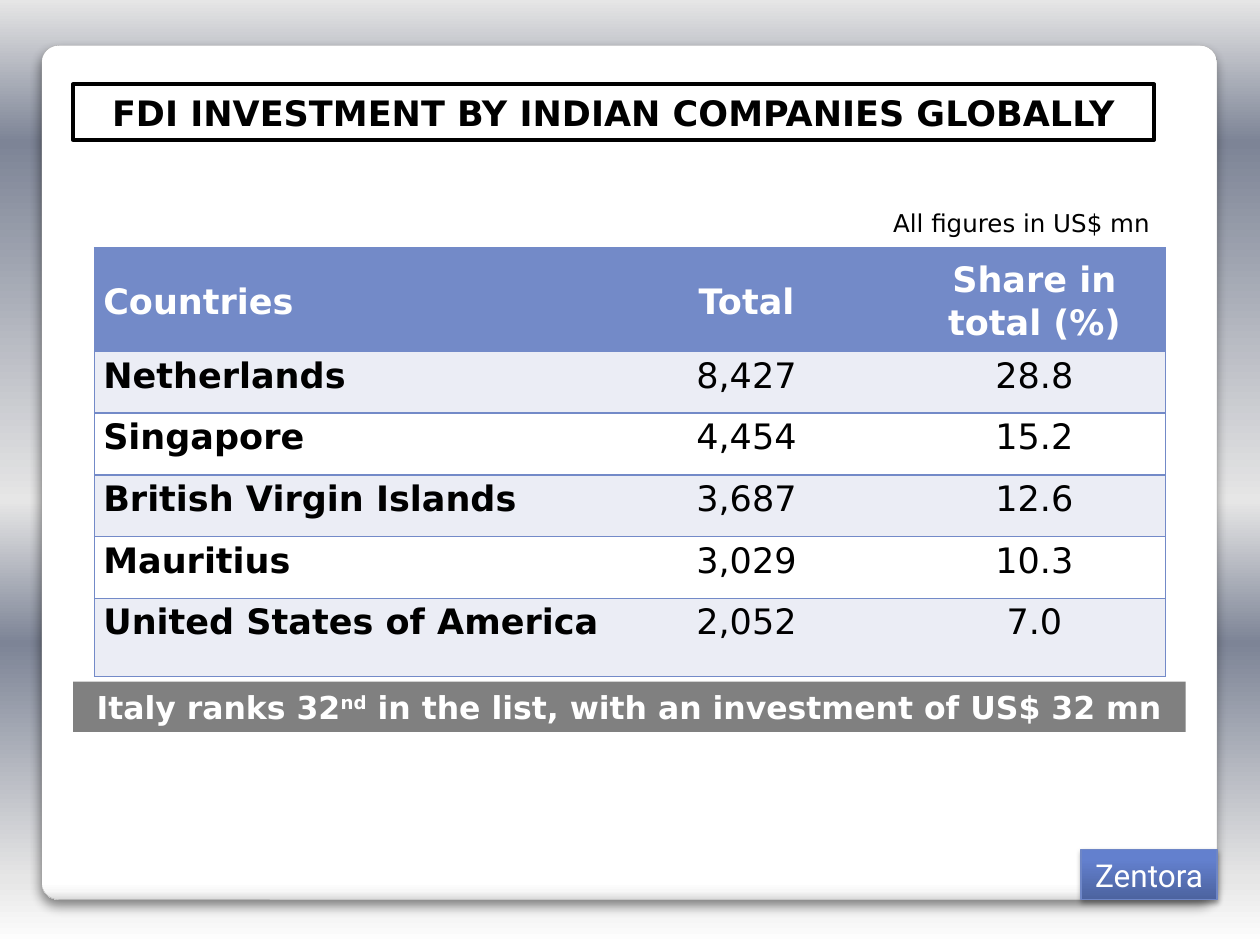
from lxml import etree
from pptx import Presentation
from pptx.dml.color import RGBColor
from pptx.enum.shapes import MSO_SHAPE
from pptx.enum.text import MSO_ANCHOR, PP_ALIGN
from pptx.oxml.ns import qn
from pptx.util import Inches, Pt

RECTANGLE, ROUNDED = MSO_SHAPE.RECTANGLE, MSO_SHAPE.ROUNDED_RECTANGLE
LEFT, CENTER = PP_ALIGN.LEFT, PP_ALIGN.CENTER
TOP, MIDDLE = MSO_ANCHOR.TOP, MSO_ANCHOR.MIDDLE

BLACK = RGBColor(0x00, 0x00, 0x00)
WHITE = RGBColor(0xFF, 0xFF, 0xFF)
GRAY = RGBColor(0x80, 0x80, 0x80)
PANEL_EDGE = RGBColor(0xA4, 0xA4, 0xA4)
TAG_EDGE = RGBColor(0x6E, 0x86, 0xC6)
TABLE_BLUE = RGBColor(0x73, 0x8A, 0xC8)
BAND = RGBColor(0xEB, 0xED, 0xF5)
LIGHT = RGBColor(0xE6, 0xE6, 0xE6)
STEEL = RGBColor(0x7D, 0x84, 0x96)

BACKDROP_STOPS = [(0, WHITE), (7, LIGHT), (32, STEEL), (47, LIGHT),
                  (85, STEEL), (100, LIGHT)]
PANEL_STOPS = [(0, WHITE), (98, WHITE), (99, RGBColor(0xF7, 0xF7, 0xF7)),
               (100, RGBColor(0xDA, 0xDA, 0xDA))]
TAG_STOPS = [(0, RGBColor(0x4C, 0x63, 0x9F)), (80, RGBColor(0x63, 0x80, 0xCE)),
             (100, RGBColor(0x61, 0x80, 0xD1))]

ROWS = [
    ("Countries", "Total", "Share in total (%)"),
    ("Netherlands", "8,427", "28.8"),
    ("Singapore", "4,454", "15.2"),
    ("British Virgin Islands", "3,687", "12.6"),
    ("Mauritius", "3,029", "10.3"),
    ("United States of America", "2,052", "7.0"),
]
COLUMN_WIDTHS = [4.16, 2.08, 2.26]
ROW_HEIGHTS = [0.82, 0.49, 0.49, 0.49, 0.49, 0.62]
CELL_MARGINS = [(0.07, 0.04), (0.08, 0.13), (0.31, 0.13)]


def add_xml(parent, tag, **attributes):
    return etree.SubElement(parent, qn(tag), attributes)


def set_gradient(fill, owner, stops, angle):
    """Fill with (percent, colour) stops; the angle runs counter-clockwise."""
    fill.gradient()
    fill.gradient_angle = angle
    stop_list = owner.find(".//" + qn("a:gsLst"))
    for old_stop in list(stop_list):
        stop_list.remove(old_stop)
    for percent, color in stops:
        stop = add_xml(stop_list, "a:gs", pos=str(percent * 1000))
        add_xml(stop, "a:srgbClr", val=str(color))


def add_shadow(shape, alpha, blur, distance):
    effects = shape.element.spPr.find(qn("a:effectLst"))
    shadow = add_xml(effects, "a:outerShdw", blurRad=str(Pt(blur)),
                     dist=str(Pt(distance)), dir="5400000",
                     algn="ctr", rotWithShape="0")
    color = add_xml(shadow, "a:srgbClr", val=str(BLACK))
    add_xml(color, "a:alpha", val=str(alpha * 1000))


def write(paragraph, text, size=20, color=BLACK, bold=False,
          font="DejaVu Sans", align=LEFT, baseline=None):
    """Append a formatted run; baseline is a raise in percent."""
    paragraph.alignment = align
    run = paragraph.add_run()
    run.text = text
    run.font.size = Pt(size)
    run.font.name = font
    run.font.bold = bold
    run.font.color.rgb = color
    if baseline:
        run.font._element.set("baseline", str(baseline * 1000))


def add_box(slide, left, top, width, height, kind=RECTANGLE, fill=None,
            stops=None, angle=90, edge=None, edge_width=1):
    box = slide.shapes.add_shape(kind, Inches(left), Inches(top),
                                 Inches(width), Inches(height))
    box.shadow.inherit = False
    if stops:
        set_gradient(box.fill, box.element, stops, angle)
    elif fill is not None:
        box.fill.solid()
        box.fill.fore_color.rgb = fill
    else:
        box.fill.background()
    if edge is None:
        box.line.fill.background()
    else:
        box.line.color.rgb = edge
        box.line.width = Pt(edge_width)
    box.text_frame.word_wrap = True
    return box


def set_borders(cell, sides):
    """Draw the named sides (L, R, T, B) and clear the others."""
    properties = cell._tc.get_or_add_tcPr()
    for position, side in enumerate("LRTB"):
        border = etree.Element(qn("a:ln" + side), w=str(Pt(1)))
        if side in sides:
            add_xml(add_xml(border, "a:solidFill"), "a:srgbClr", val=str(TABLE_BLUE))
        else:
            add_xml(border, "a:noFill")
        properties.insert(position, border)


def add_investment_table(slide):
    table = slide.shapes.add_table(
        len(ROWS), len(COLUMN_WIDTHS), Inches(0.75), Inches(1.97),
        Inches(sum(COLUMN_WIDTHS)), Inches(sum(ROW_HEIGHTS))).table
    for column, width in zip(table.columns, COLUMN_WIDTHS):
        column.width = Inches(width)
    for r, (values, height) in enumerate(zip(ROWS, ROW_HEIGHTS)):
        table.rows[r].height = Inches(height)
        header = r == 0
        background = TABLE_BLUE if header else BAND if r % 2 else WHITE
        for c, value in enumerate(values):
            cell = table.cell(r, c)
            left, right = CELL_MARGINS[c]
            cell.margin_left, cell.margin_right = Inches(left), Inches(right)
            cell.margin_top, cell.margin_bottom = Inches(0.01), 0
            cell.vertical_anchor = MIDDLE if header else TOP
            cell.fill.solid()
            cell.fill.fore_color.rgb = background
            set_borders(cell, "TB" + ("L", "", "R")[c])
            paragraph = cell.text_frame.paragraphs[0]
            paragraph.line_spacing = 1.07
            write(paragraph, value, color=WHITE if header else BLACK,
                  bold=header or c == 0, align=CENTER if c else LEFT)


def add_panel(slide):
    panel = add_box(slide, 0.33, 0.36, 9.33, 6.78, kind=ROUNDED,
                    stops=PANEL_STOPS, angle=270, edge=PANEL_EDGE, edge_width=0.16)
    panel.adjustments[0] = 0.02
    add_shadow(panel, alpha=45, blur=6, distance=4)


def add_title(slide):
    title = add_box(slide, 0.58, 0.67, 8.58, 0.44, edge=BLACK, edge_width=2.25)
    write(title.text_frame.paragraphs[0], "FDI INVESTMENT BY INDIAN COMPANIES GLOBALLY",
          bold=True, align=CENTER)


def add_unit_note(slide):
    note = slide.shapes.add_textbox(Inches(6.99), Inches(1.6), Inches(2.33), Inches(0.34))
    note.text_frame.word_wrap = True
    write(note.text_frame.paragraphs[0], "All figures in US$ mn", size=14)


def add_rank_banner(slide):
    banner = add_box(slide, 0.58, 5.41, 8.83, 0.4, fill=GRAY)
    for text, baseline in [("Italy ranks 32", None), ("nd", 30),
                           (" in the list, with an investment of US$ 32 mn", None)]:
        write(banner.text_frame.paragraphs[0], text, size=18, color=WHITE,
              bold=True, align=CENTER, baseline=baseline)


def add_company_tag(slide):
    tag = add_box(slide, 8.58, 6.74, 1.08, 0.4, stops=TAG_STOPS,
                  edge=TAG_EDGE, edge_width=0.75)
    tag.text_frame.word_wrap = False
    add_shadow(tag, alpha=35, blur=3.1, distance=1.8)
    write(tag.text_frame.paragraphs[0], "Zentora", size=18, color=WHITE,
          font="Roboto", align=CENTER)


def main():
    presentation = Presentation()
    presentation.slide_width, presentation.slide_height = Inches(10), Inches(7.5)
    slide = presentation.slides.add_slide(presentation.slide_layouts[6])
    set_gradient(slide.background.fill, slide.element, BACKDROP_STOPS, 90)
    add_panel(slide)
    add_title(slide)
    add_investment_table(slide)
    add_rank_banner(slide)
    add_unit_note(slide)
    add_company_tag(slide)
    presentation.save("out.pptx")


if __name__ == "__main__":
    main()
